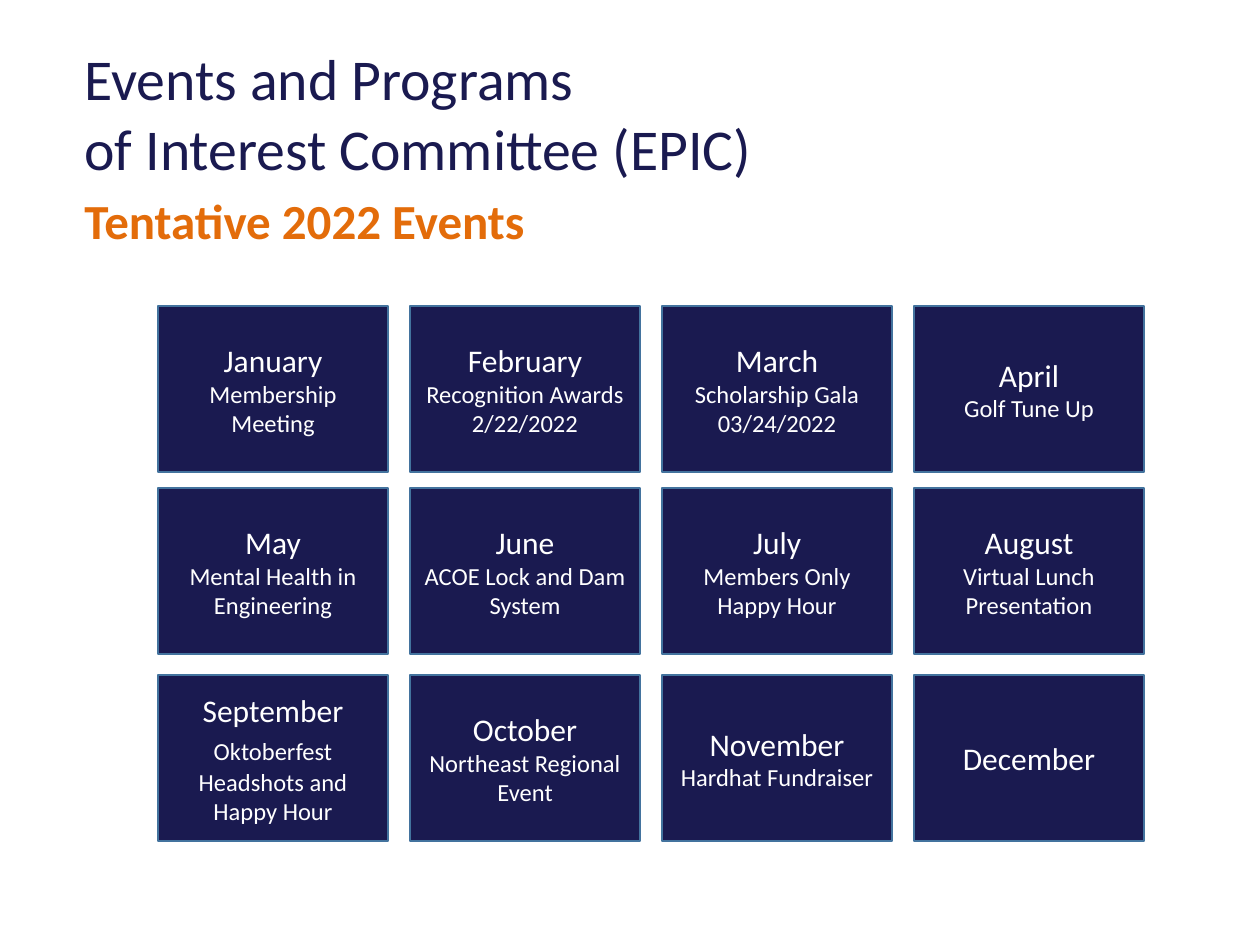
import pptx
import pptx.util
import pptx.dml.color
import pptx.enum.shapes
import pptx.enum.text

Cm = pptx.util.Cm
Pt = pptx.util.Pt
RGBColor = pptx.dml.color.RGBColor
PP_ALIGN = pptx.enum.text.PP_ALIGN
MSO_ANCHOR = pptx.enum.text.MSO_ANCHOR

NAVY = RGBColor(0x1A, 0x1A, 0x50)
ORANGE = RGBColor(0xE3, 0x6C, 0x0A)
BORDER = RGBColor(0x43, 0x73, 0x9E)
WHITE = RGBColor(0xFF, 0xFF, 0xFF)

MONTH_ROWS = [
    (6.17, [
        ("January", [[("Membership Meeting", 14)]]),
        ("February", [[("Recognition Awards", 14)], [("2/22/2022", 14)]]),
        ("March", [[("Scholarship Gala", 14)], [("03/24/2022", 14)]]),
        ("April", [[("Golf Tune Up", 14)]]),
    ]),
    (9.84, [
        ("May", [[("Mental Health in Engineering", 14)]]),
        ("June", [[("ACOE Lock and Dam System", 14)]]),
        ("July", [[("Members Only Happy Hour", 14)]]),
        ("August", [[("Virtual Lunch Presentation", 14)]]),
    ]),
    (13.61, [
        ("September", [[("Oktoberfest", 14), (" ", 18), ("Headshots and Happy Hour", 14)]]),
        ("October", [[("Northeast Regional Event", 14)]]),
        ("November", [[("Hardhat Fundraiser", 14)]]),
        ("December", []),
    ]),
]
FIRST_LEFT, COLUMN_STEP = 3.18, 5.08
CARD_WIDTH, CARD_HEIGHT = 4.65, 3.35


def add_run(paragraph, text, size, color, bold=False):
    run = paragraph.add_run()
    run.text = text
    run.font.name = "Calibri"
    run.font.size = Pt(size)
    run.font.bold = bold
    run.font.color.rgb = color


deck = pptx.Presentation()
deck.slide_width, deck.slide_height = Cm(25.4), Cm(19.05)
slide = deck.slides.add_slide(deck.slide_layouts[5])

heading = slide.shapes.title
heading.left, heading.top = Cm(1.45), Cm(0.74)
heading.width, heading.height = Cm(16.18), Cm(3.07)
heading.text_frame.vertical_anchor = MSO_ANCHOR.TOP
heading.text_frame.auto_size = pptx.enum.text.MSO_AUTO_SIZE.NONE
heading_line = heading.text_frame.paragraphs[0]
heading_line.alignment = PP_ALIGN.LEFT
add_run(heading_line, "Events and Programs", 33, NAVY)
heading_line.add_line_break()
add_run(heading_line, "of Interest Committee (EPIC)", 33, NAVY)

subtitle = slide.shapes.add_textbox(Cm(1.45), Cm(3.71), Cm(16.18), Cm(1.45))
subtitle.text_frame.word_wrap = True
add_run(subtitle.text_frame.paragraphs[0], "Tentative 2022 Events", 28, ORANGE, True)

for top, months in MONTH_ROWS:
    for column, (month, events) in enumerate(months):
        card = slide.shapes.add_shape(
            pptx.enum.shapes.MSO_SHAPE.RECTANGLE,
            Cm(FIRST_LEFT + column * COLUMN_STEP), Cm(top),
            Cm(CARD_WIDTH), Cm(CARD_HEIGHT))
        card.shadow.inherit = False
        card.fill.solid()
        card.fill.fore_color.rgb = NAVY
        card.line.color.rgb = BORDER
        card.line.width = Pt(1)
        frame = card.text_frame
        frame.word_wrap = True
        frame.vertical_anchor = MSO_ANCHOR.MIDDLE
        for index, runs in enumerate([[(month, 18)]] + events):
            paragraph = frame.add_paragraph() if index else frame.paragraphs[0]
            paragraph.alignment = PP_ALIGN.CENTER
            for text, size in runs:
                add_run(paragraph, text, size, WHITE)

deck.save("out.pptx")
